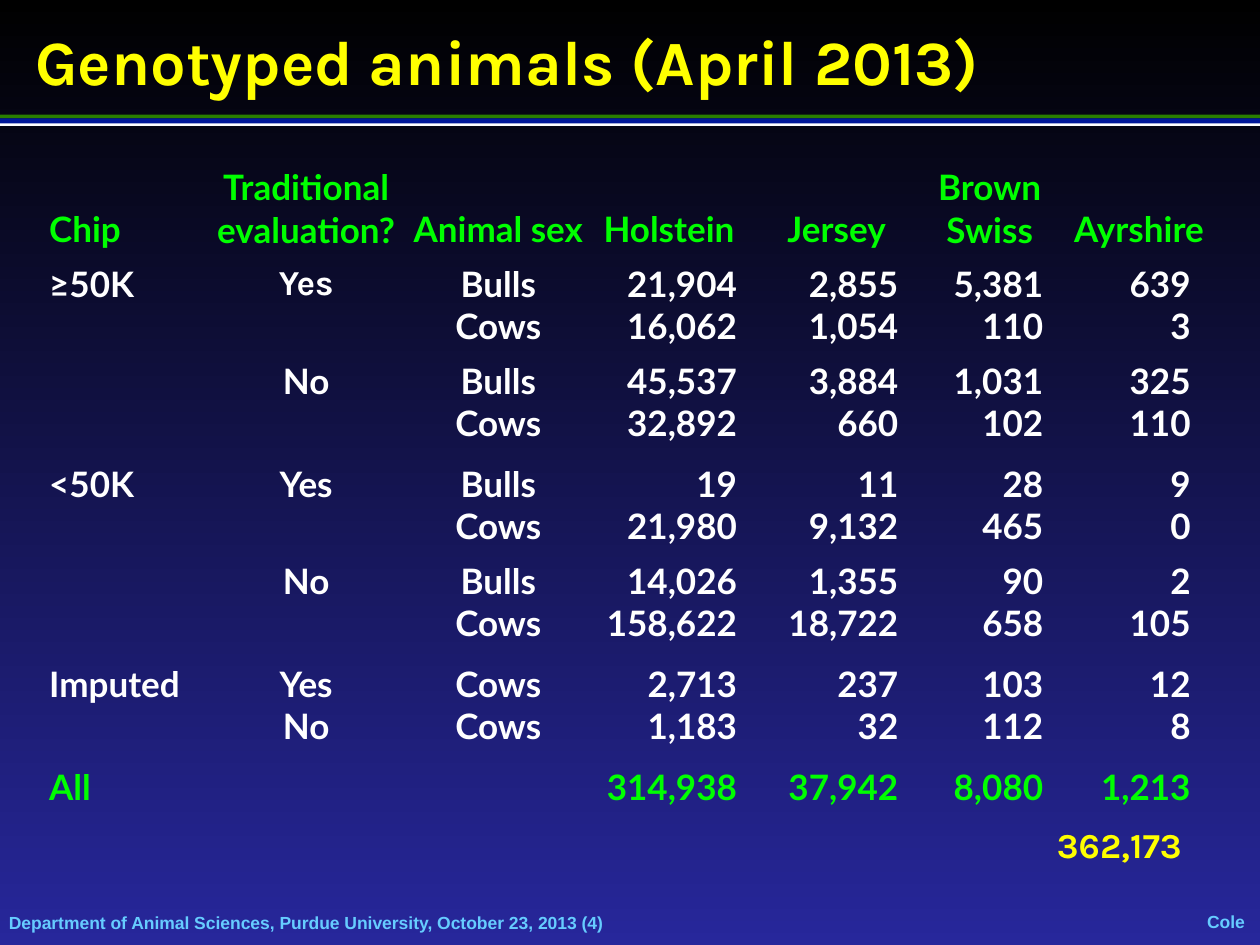
from dataclasses import dataclass

from pptx import Presentation
from pptx.dml.color import RGBColor
from pptx.enum.shapes import MSO_SHAPE as Shape
from pptx.enum.text import MSO_ANCHOR as Anchor, PP_ALIGN as Align
from pptx.oxml.ns import qn
from pptx.util import Inches, Pt


@dataclass(frozen=True)
class Theme:
    sky_top: str = "000000"
    sky_bottom: str = "27279B"
    accent: str = "FFFF00"
    heading: str = "00FF00"
    body: str = "FFFFFF"
    credit: str = "66CCFF"
    stripe_green: str = "2A7E00"
    stripe_blue: str = "001799"
    display_font: str = "Karla"
    table_font: str = "Lato"
    credit_font: str = "Arial"
    title_size: int = 36
    table_size: int = 20
    credit_size: int = 10


THEME = Theme()
NO_TABLE_STYLE = "{2D5ABB26-0587-4C30-8999-92F81FD0307C}"

HEADINGS = ["Chip", "Traditional evaluation?", "Animal sex",
            "Holstein", "Jersey", "Brown Swiss", "Ayrshire"]
COUNTS = [
    ["≥50K", "Yes", "Bulls", "21,904", "2,855", "5,381", "639"],
    ["", "", "Cows", "16,062", "1,054", "110", "3"],
    ["", "No", "Bulls", "45,537", "3,884", "1,031", "325"],
    ["", "", "Cows", "32,892", "660", "102", "110"],
    ["<50K", "Yes", "Bulls", "19", "11", "28", "9"],
    ["", "", "Cows", "21,980", "9,132", "465", "0"],
    ["", "No", "Bulls", "14,026", "1,355", "90", "2"],
    ["", "", "Cows", "158,622", "18,722", "658", "105"],
    ["Imputed", "Yes", "Cows", "2,713", "237", "103", "12"],
    ["", "No", "Cows", "1,183", "32", "112", "8"],
]
TOTALS = ["All", "", "", "314,938", "37,942", "8,080", "1,213"]
COLUMN_WIDTHS = [1.23, 1.62, 1.43, 1.33, 1.28, 1.2, 1.12]
COLUMN_ALIGNS = [Align.LEFT] + [Align.CENTER] * 2 + [Align.RIGHT] * 4
NUMBER_INSETS = [0, 0, 0, 0.15, 0.15, 0.2, 0.15]
HEADING_INSETS = [0, 0, 0, 0.05, 0, 0.05, 0]
GROUP_GAPS = {2: 0.1, 4: 0.15, 6: 0.1, 8: 0.15, 10: 0.15}


def color(code):
    return RGBColor.from_string(code)


def write(frame, text, font, size, ink, align=Align.LEFT):
    frame.text = text
    for paragraph in frame.paragraphs:
        paragraph.alignment = align
        for run in paragraph.runs:
            run.font.name = font
            run.font.size = Pt(size)
            run.font.bold = True
            run.font.color.rgb = color(ink)


def paint_background(slide):
    fill = slide.background.fill
    fill.gradient()
    fill.gradient_angle = 270
    for stop, position, code in zip(fill.gradient_stops, (0, 1),
                                    (THEME.sky_top, THEME.sky_bottom)):
        stop.position = position
        stop.color.rgb = color(code)


def place_title(slide, left, top, width, height):
    title = slide.shapes.title
    title.left, title.top = Inches(left), Inches(top)
    title.width, title.height = Inches(width), Inches(height)
    title.text_frame.vertical_anchor = Anchor.MIDDLE
    write(title.text_frame, "Genotyped animals (April 2013)",
          THEME.display_font, THEME.title_size, THEME.accent)


def add_stripes(slide, left, top, width):
    stripes = [(0, 0.03, THEME.stripe_green), (0.06, 0.03, THEME.body),
               (0.03, 0.04, THEME.stripe_blue)]
    for offset, height, code in stripes:
        stripe = slide.shapes.add_shape(
            Shape.RECTANGLE, Inches(left), Inches(top + offset),
            Inches(width), Inches(height))
        stripe.shadow.inherit = False
        stripe.fill.solid()
        stripe.fill.fore_color.rgb = color(code)
        stripe.line.fill.background()


def add_counts_table(slide, left, top, width, height):
    rows = [HEADINGS, *COUNTS, TOTALS]
    table_frame = slide.shapes.add_table(
        len(rows), len(HEADINGS), Inches(left), Inches(top),
        Inches(width), Inches(height))
    table = table_frame.table
    table.first_row = table.horz_banding = False
    for style in table_frame.element.iter(qn("a:tableStyleId")):
        style.text = NO_TABLE_STYLE
    for column, column_width in zip(table.columns, COLUMN_WIDTHS):
        column.width = Inches(column_width)
    for r, row in enumerate(rows):
        table.rows[r].height = Inches(0.33 if r else 0.39)
        for c, text in enumerate(row):
            fill_cell(table.cell(r, c), text, r, c, r == len(rows) - 1)
    table_frame.height = Inches(height)


def fill_cell(cell, text, r, c, is_total):
    is_heading = r == 0
    insets = HEADING_INSETS if is_heading else NUMBER_INSETS
    gap = 0.1 if is_heading else GROUP_GAPS.get(r, 0) if c in (1, 2) and text else 0
    cell.fill.background()
    cell.margin_left = cell.margin_top = 0
    cell.margin_right = Inches(insets[c])
    cell.margin_bottom = Inches(gap)
    cell.vertical_anchor = Anchor.BOTTOM if is_heading else Anchor.TOP
    align = Align.CENTER if is_heading and c else COLUMN_ALIGNS[c]
    font = THEME.display_font if (r, c) == (1, 1) else THEME.table_font
    ink = THEME.heading if is_heading or is_total else THEME.body
    write(cell.text_frame, text, font, THEME.table_size, ink, align)
    if is_heading and c == len(HEADINGS) - 1:
        cell.text_frame.paragraphs[0].line_spacing = 0.9


def add_grand_total(slide, left, top, width, height):
    total = slide.shapes.add_textbox(
        Inches(left), Inches(top), Inches(width), Inches(height))
    total.text_frame.word_wrap = True
    write(total.text_frame, "362,173", THEME.display_font,
          THEME.table_size, THEME.accent)


def add_credit(slide, text, left, top, width, height, align, wrap):
    credit = slide.shapes.add_textbox(
        Inches(left), Inches(top), Inches(width), Inches(height))
    frame = credit.text_frame
    frame.margin_left = frame.margin_right = 0
    frame.margin_top = frame.margin_bottom = 0
    frame.word_wrap = wrap
    frame.vertical_anchor = Anchor.MIDDLE
    write(frame, text, THEME.credit_font, THEME.credit_size, THEME.credit, align)


def main():
    deck = Presentation()
    deck.slide_width, deck.slide_height = Inches(10), Inches(7.5)
    slide = deck.slides.add_slide(deck.slide_layouts[5])
    paint_background(slide)
    add_credit(slide, "Department of Animal Sciences, Purdue University, October 23, 2013 (4)",
               0.07, 7.24, 8.09, 0.17, Align.LEFT, True)
    add_credit(slide, "Cole", 9.58, 7.23, 0.3, 0.17, Align.CENTER, False)
    add_stripes(slide, 0, 0.91, 10)
    place_title(slide, 0.18, 0.17, 9, 0.61)
    add_counts_table(slide, 0.39, 1.32, 9.22, 5.08)
    add_grand_total(slide, 8.29, 6.49, 1.42, 0.44)
    deck.save("out.pptx")


if __name__ == "__main__":
    main()
